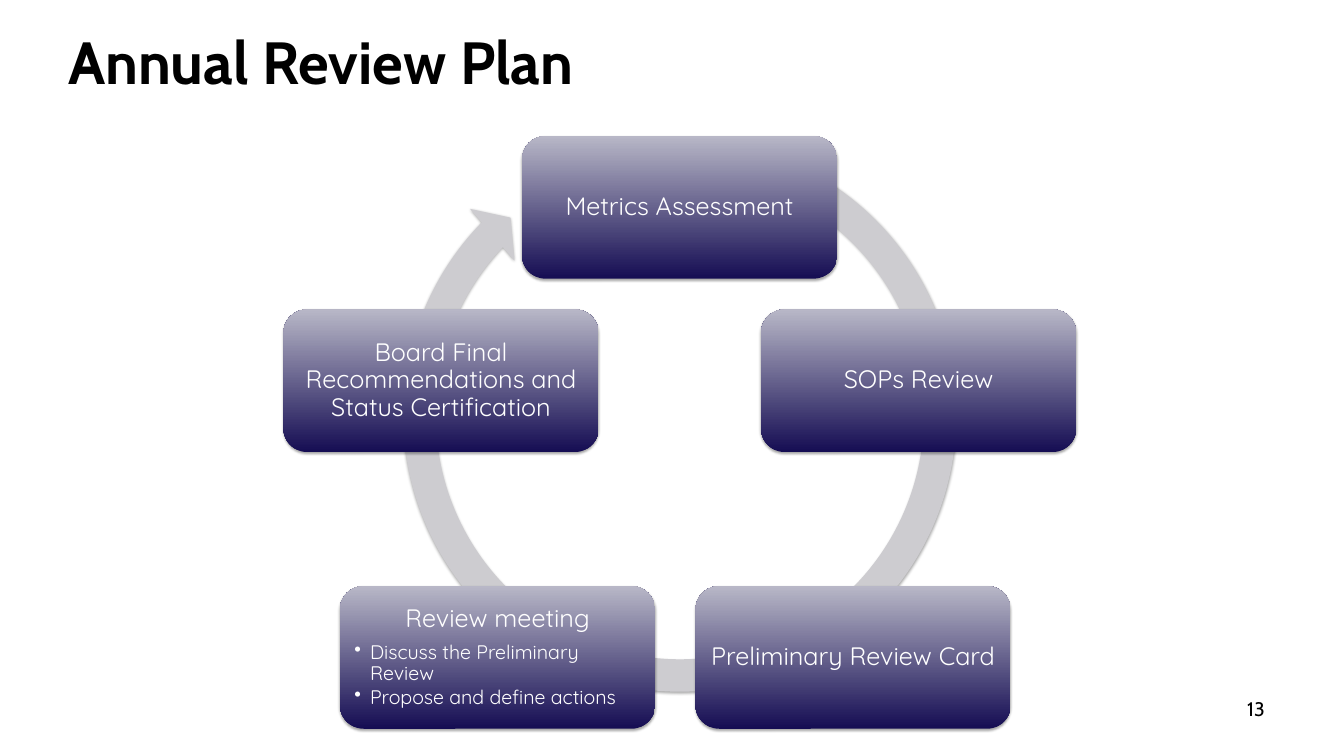
from lxml import etree
from pptx import Presentation
from pptx.dml.color import RGBColor
from pptx.enum import shapes, text
from pptx.oxml import ns
from pptx.util import Inches, Pt

BLACK = RGBColor(0x00, 0x00, 0x00)
WHITE = RGBColor(0xFF, 0xFF, 0xFF)
NAVY = RGBColor(0x15, 0x0D, 0x53)
LAVENDER = RGBColor(0xB8, 0xB7, 0xC7)
GREY = RGBColor(0xCD, 0xCC, 0xD0)

BOX_W, BOX_H = 6.25, 2.83

# left, top, heading, bullets
STEPS = [
    (10.35, 2.7, "Metrics Assessment", []),
    (15.09, 6.14, "SOPs Review", []),
    (13.79, 11.63, "Preliminary Review Card", []),
    (6.74, 11.63, "Review meeting",
     ["Discuss the Preliminary Review", "Propose and define actions"]),
    (5.62, 6.14, "Board Final Recommendations and Status Certification", []),
]


def set_attrs(obj, **values):
    for name, value in values.items():
        setattr(obj, name, value)


def set_frame(tf, anchor, inset_x, inset_y):
    set_attrs(tf, word_wrap=True, auto_size=text.MSO_AUTO_SIZE.NONE,
              vertical_anchor=anchor,
              margin_left=Inches(inset_x), margin_right=Inches(inset_x),
              margin_top=Inches(inset_y), margin_bottom=Inches(inset_y))


def write(p, words, align, font, size, color, bold=False):
    p.alignment = align
    r = p.add_run()
    r.text = words
    set_attrs(r.font, name=font, size=Pt(size), bold=bold)
    r.font.color.rgb = color


def add_bullet(p, indent):
    pPr = p._p.get_or_add_pPr()
    pPr.set("marL", str(Inches(indent)))
    pPr.set("indent", str(-Inches(indent)))
    etree.SubElement(pPr, ns.qn("a:buChar"), char="•")


def add_shadow(sp):
    sp.shadow.inherit = False
    effects = sp._element.spPr.find(ns.qn("a:effectLst"))
    shadow = etree.SubElement(effects, ns.qn("a:outerShdw"), blurRad=str(Pt(3.1)),
                              dist=str(Pt(1.8)), dir="5400000", rotWithShape="0")
    color = etree.SubElement(shadow, ns.qn("a:srgbClr"), val=str(BLACK))
    etree.SubElement(color, ns.qn("a:alpha"), val="35000")


def add_title(s, words):
    sp = s.shapes.title
    set_attrs(sp, left=Inches(1.11), top=Inches(-0.54),
              width=Inches(23.98), height=Inches(2.57))
    set_frame(sp.text_frame, text.MSO_ANCHOR.BOTTOM, 0.24, 0.12)
    write(sp.text_frame.paragraphs[0], words, text.PP_ALIGN.LEFT,
          "Cabin", 85, BLACK, bold=True)


def add_page_number(s, number):
    sp = s.shapes.add_textbox(Inches(19.1), Inches(13.66), Inches(6.22), Inches(0.8))
    set_frame(sp.text_frame, text.MSO_ANCHOR.MIDDLE, 0.24, 0.12)
    write(sp.text_frame.paragraphs[0], number, text.PP_ALIGN.RIGHT, "Cabin", 28, BLACK)


def add_cycle_arrow(s):
    sp = s.shapes.add_shape(shapes.MSO_SHAPE.CIRCULAR_ARROW, Inches(7.64), Inches(2.4),
                            Inches(11.68), Inches(11.68))
    for i, value in enumerate((0.055, 3.307, 134.348, 175.973, 0.058)):
        sp.adjustments[i] = value
    sp.fill.solid()
    sp.fill.fore_color.rgb = GREY
    sp.line.fill.background()
    add_shadow(sp)


def add_step(s, left, top, heading, bullets):
    sp = s.shapes.add_shape(shapes.MSO_SHAPE.ROUNDED_RECTANGLE, Inches(left), Inches(top),
                            Inches(BOX_W), Inches(BOX_H))
    sp.fill.gradient()
    sp.fill.gradient_angle = 90
    for stop, position, color in zip(sp.fill.gradient_stops, (0, 1), (NAVY, LAVENDER)):
        stop.position = position
        stop.color.rgb = color
    sp.line.fill.background()
    add_shadow(sp)

    tf = sp.text_frame
    set_frame(tf, text.MSO_ANCHOR.MIDDLE, 0.15, 0.15)
    p = tf.paragraphs[0]
    set_attrs(p, line_spacing=0.9, space_after=Pt(12.6))
    write(p, heading, text.PP_ALIGN.CENTER, "Quicksand", 36, WHITE)
    for words in bullets:
        p = tf.add_paragraph()
        add_bullet(p, 0.31)
        set_attrs(p, level=1, line_spacing=0.9, space_after=Pt(4.2))
        write(p, words, text.PP_ALIGN.LEFT, "Quicksand", 28, WHITE)


def main():
    prs = Presentation()
    set_attrs(prs, slide_width=Inches(26.65), slide_height=Inches(15))
    s = prs.slides.add_slide(prs.slide_layouts[5])

    # Title and page number
    add_title(s, "Annual Review Plan")
    add_page_number(s, "13")

    # Review cycle
    add_cycle_arrow(s)
    for step in STEPS:
        add_step(s, *step)

    prs.save("out.pptx")


if __name__ == "__main__":
    main()
